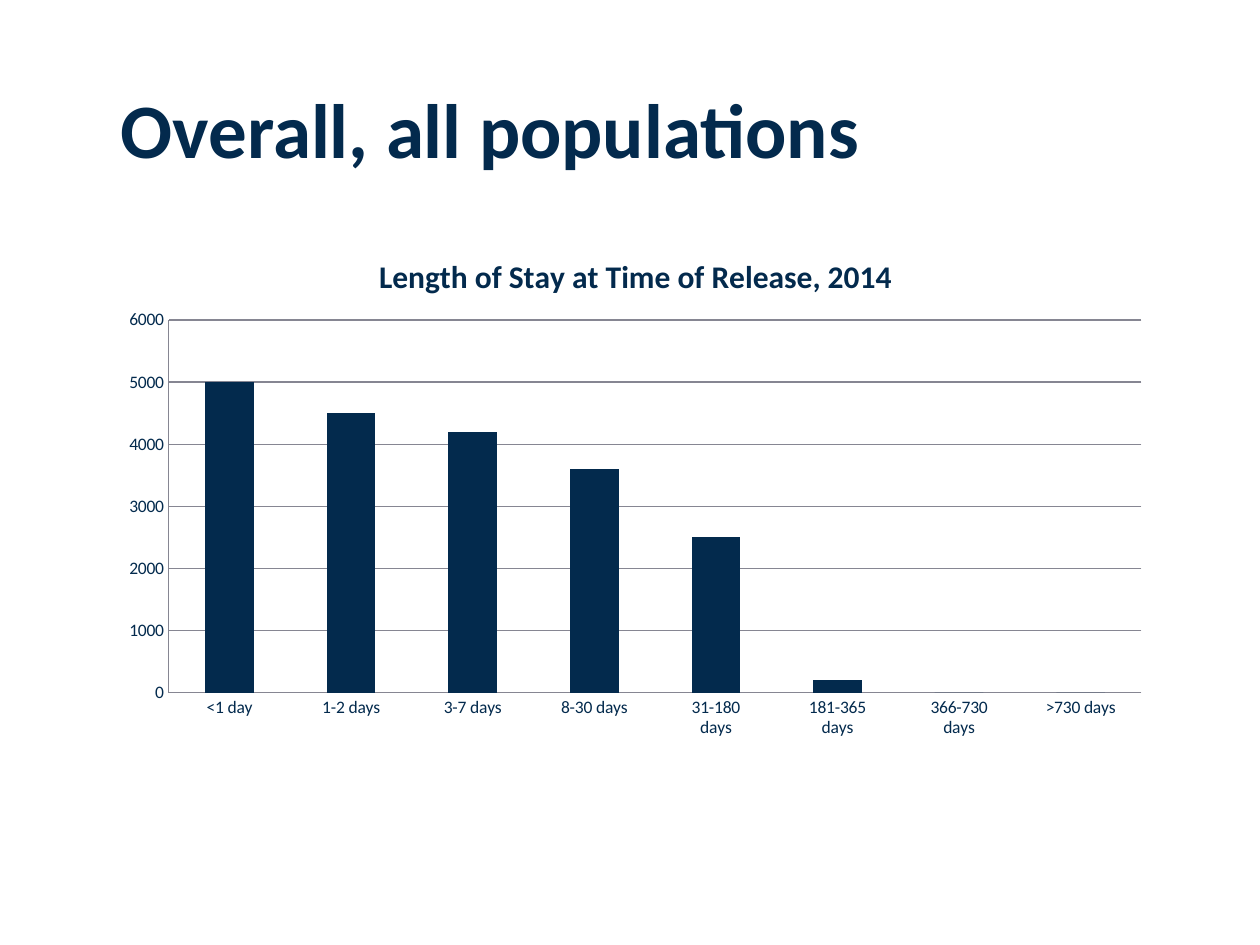
from lxml import etree
from pptx import Presentation
from pptx.chart.data import CategoryChartData
from pptx.dml.color import RGBColor
from pptx.enum.chart import XL_CHART_TYPE, XL_TICK_MARK
from pptx.enum.text import MSO_ANCHOR, PP_ALIGN
from pptx.oxml.ns import qn
from pptx.util import Inches, Pt

# Content
HEADING = "Overall, all populations"
CHART_TITLE = "Length of Stay at Time of Release, 2014"
STAYS = {
    "<1 day": 5000,
    "1-2 days": 4500,
    "3-7 days": 4200,
    "8-30 days": 3600,
    "31-180\ndays": 2500,
    "181-365\ndays": 200,
    "366-730\ndays": 0,
    ">730 days": 0,
}

# Chart size and the plot inside it, in inches
CHART_WIDTH, CHART_HEIGHT = 8.37, 4.1
PLOT_SHARES = {
    "x": 0.48 / CHART_WIDTH,
    "y": 0.7 / CHART_HEIGHT,
    "w": 7.72 / CHART_WIDTH,
    "h": 2.96 / CHART_HEIGHT,
}

NAVY = RGBColor(0x03, 0x2A, 0x4D)
GRID_GRAY = RGBColor(0x86, 0x86, 0x92)
FONT = "Calibri"
LEFT, WIDTH = Inches(0.86), Inches(CHART_WIDTH)


def set_font(font, size, bold=False):
    font.name, font.size, font.bold = FONT, Pt(size), bold
    font.color.rgb = NAVY


def set_line(line):
    line.color.rgb = GRID_GRAY
    line.width = Pt(0.75)


def place_plot(chart, shares):
    """Fix the inner plot area as shares of the chart's size."""
    plot_area = chart.plots[0]._element.getparent()
    for old in plot_area.findall(qn("c:layout")):
        plot_area.remove(old)
    layout = etree.Element(qn("c:layout"))
    plot_area.insert(0, layout)
    manual = etree.SubElement(layout, qn("c:manualLayout"))
    settings = {"layoutTarget": "inner", "xMode": "edge", "yMode": "edge", **shares}
    for name, value in settings.items():
        etree.SubElement(manual, qn(f"c:{name}")).set("val", str(value))


deck = Presentation()
deck.slide_width, deck.slide_height = Inches(10), Inches(7.5)
page = deck.slides.add_slide(deck.slide_layouts[5])

# Heading
title = page.shapes.title
title.left, title.top, title.width, title.height = LEFT, Inches(0.39), WIDTH, Inches(1.25)
title.text_frame.text = HEADING
title.text_frame.vertical_anchor = MSO_ANCHOR.MIDDLE
para = title.text_frame.paragraphs[0]
para.alignment = PP_ALIGN.LEFT
set_font(para.font, 44, True)

# Column chart
data = CategoryChartData()
data.categories = list(STAYS)
data.add_series("Series 1", list(STAYS.values()))
chart = page.shapes.add_chart(
    XL_CHART_TYPE.COLUMN_CLUSTERED, LEFT, Inches(1.84), WIDTH, Inches(CHART_HEIGHT), data
).chart
set_font(chart.font, 10)
chart.has_legend = False
chart.has_title = True
chart.chart_title.text_frame.text = CHART_TITLE
set_font(chart.chart_title.text_frame.paragraphs[0].font, 18, True)

plot = chart.plots[0]
plot.gap_width = 150
plot.vary_by_categories = False
fill = plot.series[0].format.fill
fill.solid()
fill.fore_color.rgb = NAVY

# Axes
for axis in (chart.category_axis, chart.value_axis):
    axis.major_tick_mark = axis.minor_tick_mark = XL_TICK_MARK.NONE
    set_line(axis.format.line)
scale = chart.value_axis
scale.minimum_scale, scale.maximum_scale, scale.major_unit = 0, 6000, 1000
scale.has_major_gridlines = True
set_line(scale.major_gridlines.format.line)
place_plot(chart, PLOT_SHARES)

deck.save("out.pptx")
